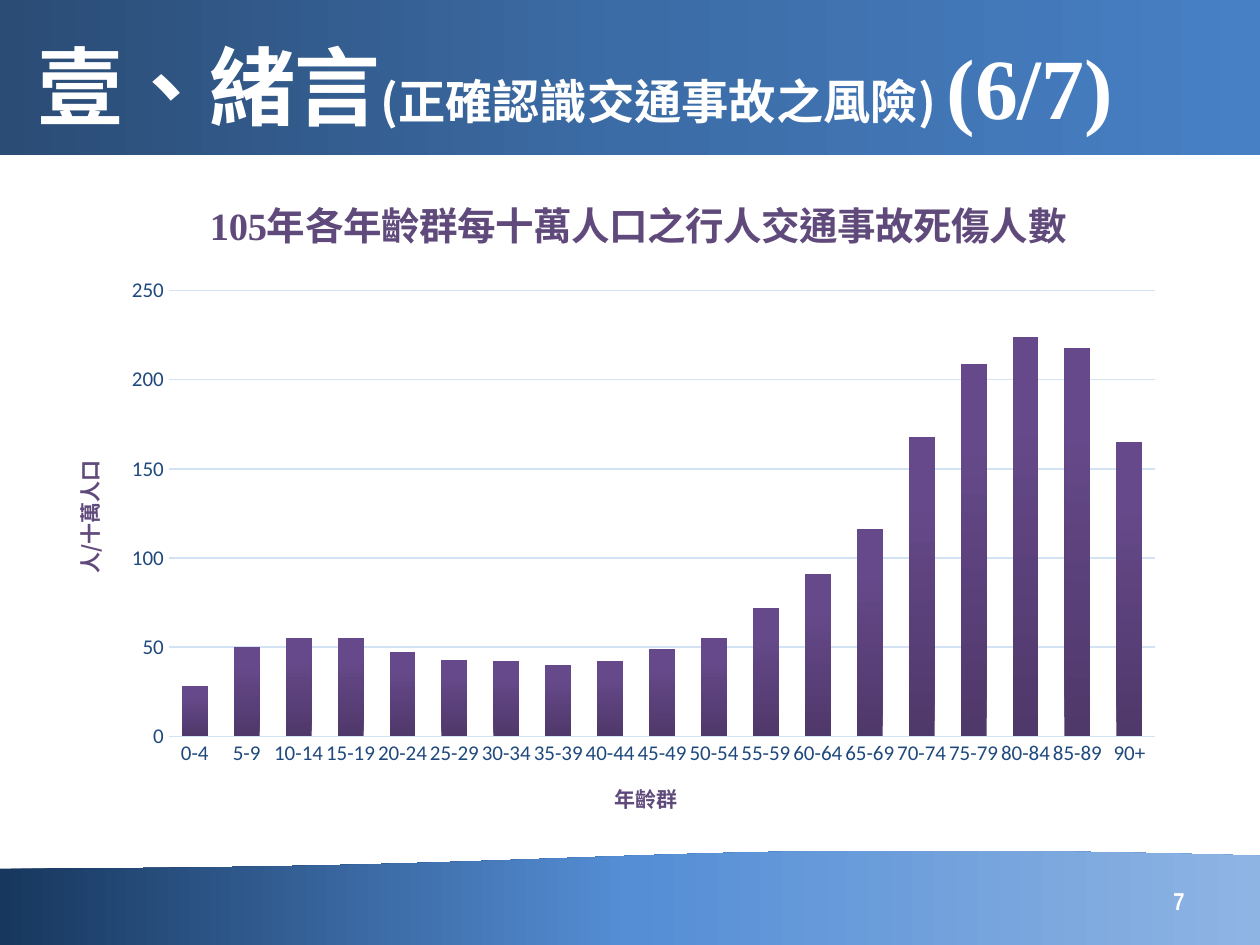
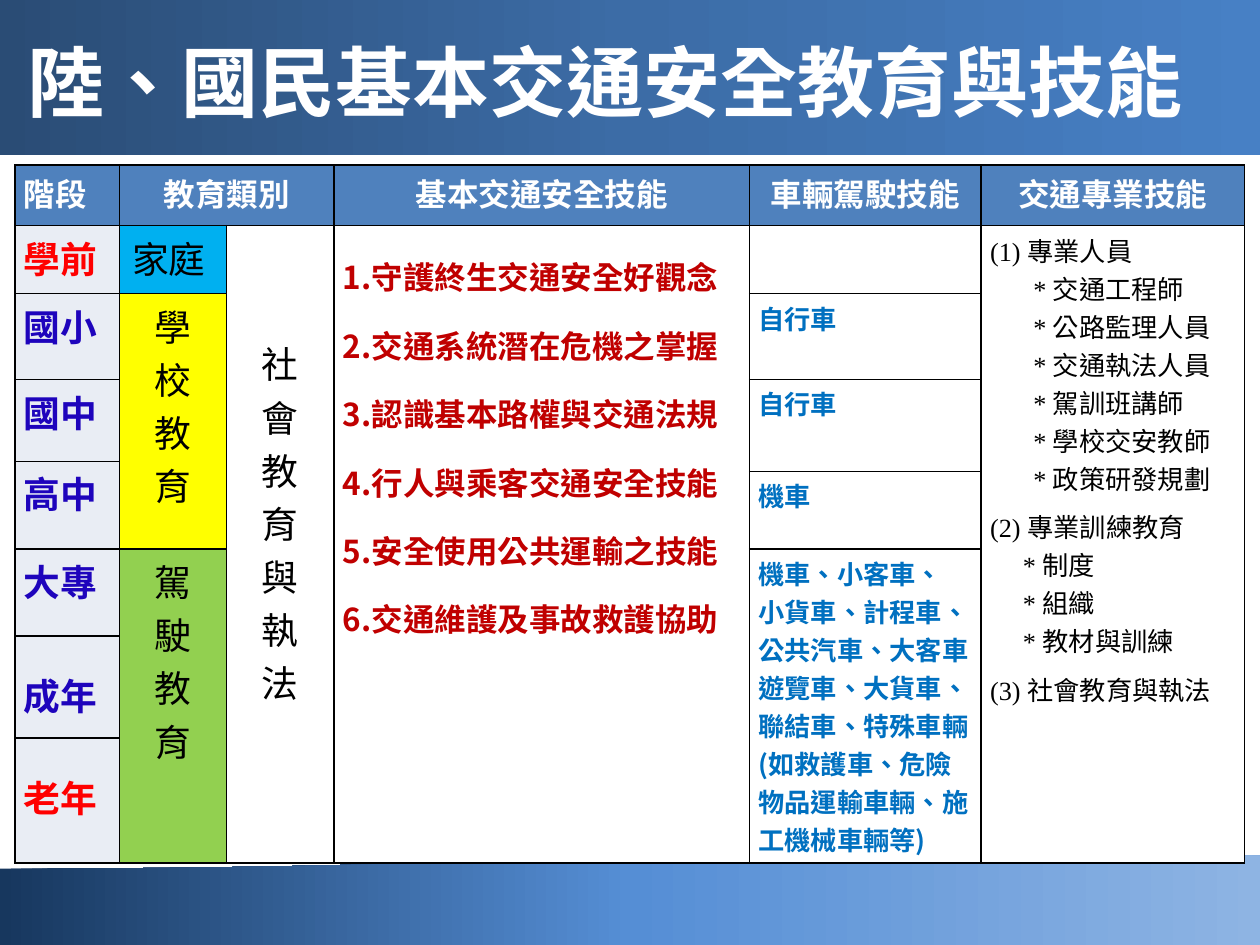
from lxml import etree
from pptx import Presentation
from pptx import util as u
from pptx.chart import data as chart_data
from pptx.dml.color import RGBColor
from pptx.enum import chart as charts
from pptx.enum import shapes, text
from pptx.oxml.ns import qn

WHITE = RGBColor(0xFF, 0xFF, 0xFF)
BLACK = RGBColor(0, 0, 0)
RED = RGBColor(0xFF, 0, 0)
DARK_RED = RGBColor(0xC0, 0, 0)
STAGE_BLUE = RGBColor(0x1E, 0x04, 0xBC)
VEHICLE_BLUE = RGBColor(0, 0x70, 0xC0)
HEADER_BLUE = RGBColor(0x4F, 0x81, 0xBD)
STAGE_FILL = RGBColor(0xE9, 0xED, 0xF4)
HOME_FILL = RGBColor(0, 0xB0, 0xF0)
SCHOOL_FILL = RGBColor(0xFF, 0xFF, 0)
DRIVING_FILL = RGBColor(0x92, 0xD0, 0x50)
PURPLE = RGBColor(0x60, 0x4A, 0x7B)
AXIS_BLUE = RGBColor(0x1F, 0x49, 0x7D)
GRID_BLUE = RGBColor(0xD4, 0xE3, 0xF4)
WAVE_STOPS = [(0, RGBColor(0x17, 0x37, 0x5E)), (50, RGBColor(0x55, 0x8E, 0xD5)),
              (100, RGBColor(0x8E, 0xB4, 0xE3))]
BAND_STOPS = [(0, RGBColor(0x2A, 0x4C, 0x75)), (50, RGBColor(0x3C, 0x6C, 0xA6)),
              (100, RGBColor(0x47, 0x80, 0xC5))]
BAR_STOPS = [(0, RGBColor(0x4F, 0x38, 0x6A)), (80, RGBColor(0x66, 0x49, 0x8A)),
             (100, RGBColor(0x66, 0x48, 0x8C))]
CJK = "Noto Sans CJK SC"
SERIF = "Times New Roman"
LATIN = "Calibri"
CENTER = text.PP_ALIGN.CENTER


def style_font(font, size, color, bold=False, name=CJK):
    font.size, font.bold, font.name = u.Pt(size), bold, name
    font.color.rgb = color
    font._element.set("lang", "zh-TW")
    east_asian = etree.Element(qn("a:ea"), typeface=CJK)
    font._element.find(qn("a:latin")).addnext(east_asian)


def write_text(paragraph, words, size=18, color=BLACK, bold=False, name=CJK,
               align=None, before=None, spacing=None, left=None):
    if left is not None:
        properties = paragraph._p.get_or_add_pPr()
        properties.set("marL", str(u.Cm(left)))
        properties.set("indent", "0")
    if align is not None:
        paragraph.alignment = align
    if before is not None:
        paragraph.space_before = u.Pt(before)
    if spacing is not None:
        paragraph.line_spacing = spacing
    run = paragraph.add_run()
    run.text = words
    style_font(run.font, size, color, bold, name)


def set_gradient(fill, element, stops, angle):
    fill.gradient()
    gradient = next(element.iter(qn("a:gradFill")))
    stop_list = gradient.find(qn("a:gsLst"))
    stop_list.clear()
    for position, color in stops:
        stop = etree.SubElement(stop_list, qn("a:gs"), pos=str(position * 1000))
        etree.SubElement(stop, qn("a:srgbClr"), val=str(color))
    gradient.find(qn("a:lin")).set("ang", str(angle * 60000))


def place_in_chart(element, **fractions):
    layout = element.find(qn("c:layout"))
    if layout is None:
        layout = etree.Element(qn("c:layout"))
        element.insert(1 if element.tag == qn("c:title") else 0, layout)
    manual = etree.SubElement(layout, qn("c:manualLayout"))
    if "w" in fractions:
        etree.SubElement(manual, qn("c:layoutTarget"), val="inner")
    for mode in ("xMode", "yMode"):
        etree.SubElement(manual, qn("c:" + mode), val="edge")
    for side, value in fractions.items():
        etree.SubElement(manual, qn("c:" + side), val=str(value))


def draw_borders(cell):
    properties = cell._tc.get_or_add_tcPr()
    for index, side in enumerate(("lnL", "lnR", "lnT", "lnB")):
        line = etree.Element(qn("a:" + side), w=str(u.Pt(1)))
        fill = etree.SubElement(line, qn("a:solidFill"))
        etree.SubElement(fill, qn("a:srgbClr"), val=str(BLACK))
        properties.insert(index, line)


class Deck:
    def __init__(self):
        self.presentation = Presentation()
        self.presentation.slide_width = u.Cm(25.4)
        self.presentation.slide_height = u.Cm(19.05)
        self.slide = None

    def add_slide(self):
        self.slide = self.presentation.slides.add_slide(self.presentation.slide_layouts[6])
        self.add_band(shapes.MSO_SHAPE.FLOWCHART_DOCUMENT, 17.12, 1.96, WAVE_STOPS, 180)
        self.add_band(shapes.MSO_SHAPE.RECTANGLE, 0, 3.12, BAND_STOPS, 0)

    def add_band(self, kind, top, height, stops, angle):
        shape = self.slide.shapes.add_shape(
            kind, 0, u.Cm(top), self.presentation.slide_width, u.Cm(height))
        shape.rotation = angle
        shape.shadow.inherit = False
        shape.line.fill.background()
        set_gradient(shape.fill, shape._element.spPr, stops, angle)

    def add_text(self, left, top, width, height, runs, **shared):
        box = self.slide.shapes.add_textbox(u.Cm(left), u.Cm(top), u.Cm(width), u.Cm(height))
        frame = box.text_frame
        frame.word_wrap = True
        frame.vertical_anchor = text.MSO_ANCHOR.MIDDLE
        for words, style in runs:
            write_text(frame.paragraphs[0], words, color=WHITE, bold=True, **shared, **style)

    def add_title(self, left, width, height, runs):
        self.add_text(left, 0.53, width, height, runs)

    def add_column_chart(self, left, top, width, height, categories, values, name):
        data = chart_data.CategoryChartData()
        data.categories = categories
        data.add_series(name, values)
        chart = self.slide.shapes.add_chart(
            charts.XL_CHART_TYPE.COLUMN_CLUSTERED,
            u.Cm(left), u.Cm(top), u.Cm(width), u.Cm(height), data).chart
        chart.has_legend = False
        chart.font.size, chart.font.name = u.Pt(10), LATIN
        plot = chart.plots[0]
        plot.vary_by_categories = False
        plot.gap_width, plot.overlap = 100, -24
        series = plot.series[0]
        series.invert_if_negative = False
        set_gradient(series.format.fill, series._element, BAR_STOPS, 270)
        for axis in (chart.category_axis, chart.value_axis):
            axis.major_tick_mark = axis.minor_tick_mark = charts.XL_TICK_MARK.NONE
            style_font(axis.tick_labels.font, 12, AXIS_BLUE, name=LATIN)
        chart.value_axis.minimum_scale = 0
        chart.value_axis.maximum_scale = 250
        chart.value_axis.major_unit = 50
        chart.value_axis.format.line.fill.background()
        for lined in (chart.category_axis, chart.value_axis.major_gridlines):
            lined.format.line.color.rgb = GRID_BLUE
            lined.format.line.width = u.Pt(0.75)
        place_in_chart(chart._chartSpace.chart.plotArea, x=0.11, y=0.17, w=0.87, h=0.67)
        return chart

    def add_chart_title(self, title, words, size, x, y, name=CJK):
        write_text(title.text_frame.paragraphs[0], words, size=size, color=PURPLE,
                   bold=True, name=name)
        place_in_chart(title._element, x=x, y=y)

    def add_table(self, left, top, columns, rows):
        table = self.slide.shapes.add_table(
            len(rows), len(columns), u.Cm(left), u.Cm(top),
            u.Cm(sum(columns)), u.Cm(sum(rows))).table
        table.horz_banding = False
        for column, width in zip(table.columns, columns):
            column.width = u.Cm(width)
        for row, height in zip(table.rows, rows):
            row.height = u.Cm(height)
        for cell in table.iter_cells():
            cell.fill.solid()
            cell.fill.fore_color.rgb = WHITE
            cell.margin_left = cell.margin_right = u.Cm(0.18)
            cell.margin_top = cell.margin_bottom = u.Cm(0.1)
            draw_borders(cell)
        return table

    def fill_cell(self, table, row, column, lines, fill=WHITE, down=1, across=1, **shared):
        cell = table.cell(row, column)
        if down > 1 or across > 1:
            cell.merge(table.cell(row + down - 1, column + across - 1))
        cell.fill.fore_color.rgb = fill
        frame = cell.text_frame
        for index, line in enumerate(lines):
            words, style = line if isinstance(line, tuple) else (line, {})
            paragraph = frame.add_paragraph() if index else frame.paragraphs[0]
            write_text(paragraph, words, **{**shared, **style})
        return cell


def build_pedestrian_slide(deck):
    deck.add_slide()
    ages = [f"{start}-{start + 4}" for start in range(0, 90, 5)] + ["90+"]
    casualties = [28, 50, 55, 55, 47, 43, 42, 40, 42, 49, 55, 72, 91, 116,
                  168, 209, 224, 218, 165]
    chart = deck.add_column_chart(0.89, 3.58, 22.86, 13.41, ages, casualties, "死傷人數")
    deck.add_chart_title(chart.chart_title, "105年各年齡群每十萬人口之行人交通事故死傷人數",
                         22, 0.14, 0.01, name=SERIF)
    deck.add_chart_title(chart.category_axis.axis_title, "年齡群", 12, 0.5, 0.9)
    deck.add_chart_title(chart.value_axis.axis_title, "人/十萬人口", 12, 0.02, 0.42)
    deck.add_title(0.51, 24.61, 2.36, [
        ("壹、緒言", {"size": 49}),
        ("(正確認識交通事故之風險) ", {"size": 27}),
        ("(6/7)", {"size": 49, "name": SERIF})])
    deck.add_text(18.21, 17.65, 5.92, 1.02, [("7", {"size": 14})],
                  name="Arial Narrow", align=text.PP_ALIGN.RIGHT)


def build_skills_slide(deck):
    deck.add_slide()
    table = deck.add_table(0.3, 3.33, [2.11, 2.16, 2.16, 8.38, 4.67, 5.31],
                           [1.22, 1.37, 1.73, 1.65, 0.2, 1.57, 1.75, 2.06, 2.52])

    headers = [(0, "階段", 1, None), (1, "教育類別", 2, CENTER), (3, "基本交通安全技能", 1, CENTER),
               (4, "車輛駕駛技能", 1, CENTER), (5, "交通專業技能", 1, CENTER)]
    for column, words, across, align in headers:
        deck.fill_cell(table, 0, column, [words], HEADER_BLUE, across=across,
                       color=WHITE, bold=True, align=align)

    stages = [(1, "學前", 1, RED, None), (2, "國小", 1, STAGE_BLUE, None),
              (3, "國中", 1, STAGE_BLUE, None), (4, "高中", 2, STAGE_BLUE, None),
              (6, "大專", 1, STAGE_BLUE, None), (7, "成年", 1, STAGE_BLUE, 1.5),
              (8, "老年", 1, RED, 1.5)]
    for row, words, down, color, spacing in stages:
        deck.fill_cell(table, row, 0, [words], STAGE_FILL, down=down,
                       size=21, color=color, bold=True, spacing=spacing)

    educations = [(1, 1, ["家庭 "], HOME_FILL, 1), (2, 1, "學校教育", SCHOOL_FILL, 4),
                  (6, 1, "駕駛教育", DRIVING_FILL, 3)]
    for row, column, lines, fill, down in educations:
        deck.fill_cell(table, row, column, lines, fill, down=down, size=21, align=CENTER)
    society = deck.fill_cell(table, 1, 2, "社會教育與執法", down=8, size=21, align=CENTER)
    society.margin_top = u.Cm(2.23)

    skills = ["守護終生交通安全好觀念", "交通系統潛在危機之掌握", "認識基本路權與交通法規",
              "行人與乘客交通安全技能", "安全使用公共運輸之技能", "交通維護及事故救護協助"]
    deck.fill_cell(table, 1, 3, [f"{number}.{skill}" for number, skill in enumerate(skills, 1)],
                   down=8, color=DARK_RED, bold=True, spacing=1.5)

    vehicles = [(2, ["自行車"], 1), (3, ["自行車"], 2), (5, ["機車"], 1),
                (6, ["機車、小客車、", "小貨車、計程車、",
                     "公共汽車、大客車遊覽車、大貨車、聯結車、特殊車輛"
                     "(如救護車、危險物品運輸車輛、施工機械車輛等)"], 3)]
    for row, lines, down in vehicles:
        deck.fill_cell(table, row, 4, lines, down=down, size=15, color=VEHICLE_BLUE, bold=True)

    staff = ["交通工程師", "公路監理人員", "交通執法人員", "駕訓班講師", "學校交安教師", "政策研發規劃"]
    training = ["制度", "組織", "教材與訓練"]
    professions = (["(1) 專業人員"]
                   + [(f"* {item}", {"left": 0.87}) for item in staff]
                   + [("(2) 專業訓練教育", {"before": 6})]
                   + [(f"* {item}", {"left": 0.66}) for item in training]
                   + [("(3) 社會教育與執法", {"before": 6})])
    deck.fill_cell(table, 1, 5, professions, down=8, size=15, name=SERIF, left=0)

    deck.add_title(0.3, 24.79, 2.21, [("陸、國民基本交通安全教育與技能", {"size": 44})])


def main():
    deck = Deck()
    build_pedestrian_slide(deck)
    build_skills_slide(deck)
    deck.presentation.save("out.pptx")


if __name__ == "__main__":
    main()
